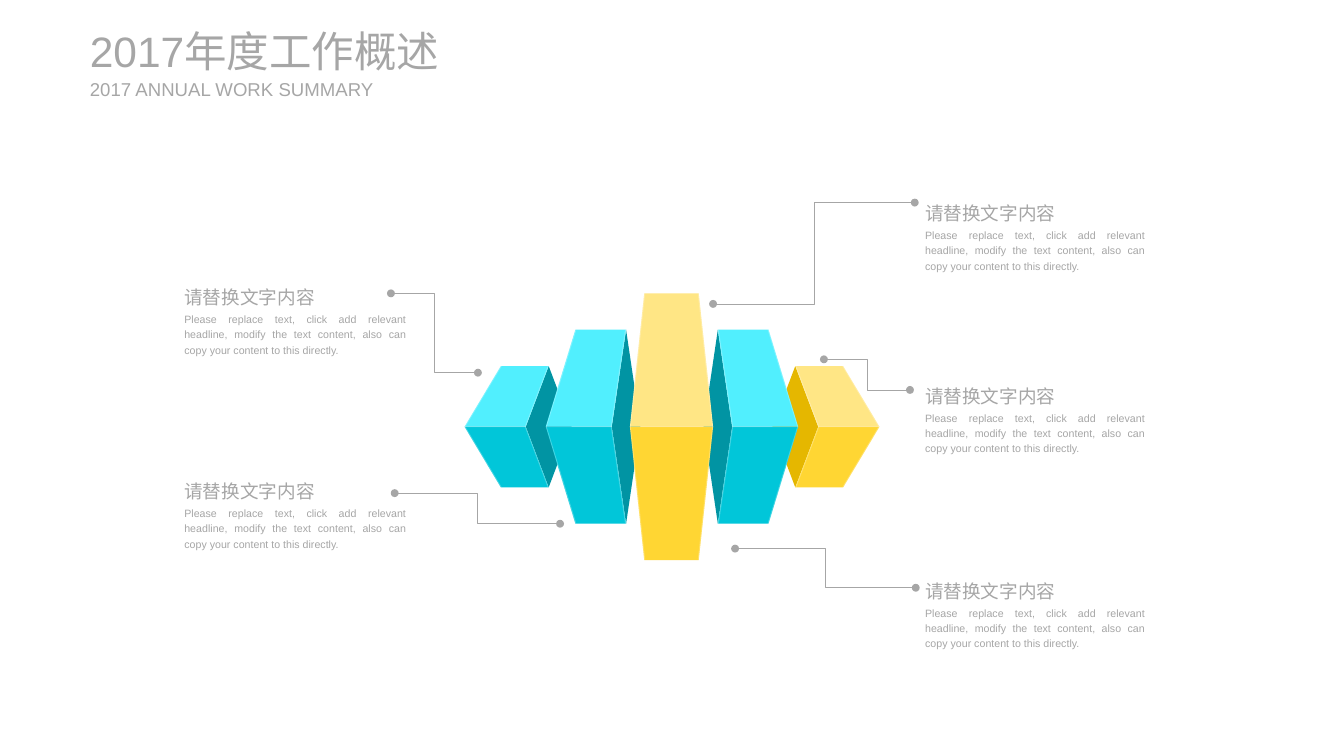
from lxml.etree import SubElement
from pptx import Presentation
from pptx.dml.color import RGBColor
from pptx.enum.shapes import MSO_CONNECTOR
from pptx.enum.text import MSO_ANCHOR, MSO_AUTO_SIZE, PP_ALIGN
from pptx.oxml.ns import qn
from pptx.util import Inches, Pt

SLIDE_WIDTH, SLIDE_HEIGHT = 14.06, 7.91
AXIS_Y = 4.465
EDGE = 0.01

GREY = RGBColor(0xA6, 0xA6, 0xA6)
WHITE = RGBColor(0xFF, 0xFF, 0xFF)
# Upper face, lower face, side face
CYAN = (RGBColor(0x51, 0xEF, 0xFE), RGBColor(0x01, 0xC6, 0xD9), RGBColor(0x01, 0x94, 0xA3))
YELLOW = (RGBColor(0xFF, 0xE6, 0x85), RGBColor(0xFF, 0xD6, 0x33), RGBColor(0xE5, 0xB7, 0x00))

HEADING = "请替换文字内容"
BODY = ("Please replace text, click add relevant headline, modify the text content, "
        "also can copy your content to this directly.")

# Outer point, outer corner, inner corner, inner point, half height, far point of side face
SMALL_BLOCK = (4.86, 5.24, 5.74, 5.5, 0.635, 5.98)
MEDIUM_BLOCK = (5.71, 6.02, 6.55, 6.4, 1.015, 6.7)
CENTRE_BLOCK = (6.59, 6.74, 7.31, 7.46, 1.395, None)

# Left, top, body width
NOTES = [(1.83, 2.9, 2.52), (1.83, 4.93, 2.52),
         (9.58, 2.02, 2.5), (9.58, 3.93, 2.5), (9.58, 5.97, 2.5)]
# Start x, start y, end x, end y
LEADERS = [(5, 3.9, 4.09, 3.07), (5.86, 5.48, 4.13, 5.16), (9.57, 2.12, 7.46, 3.18),
           (9.52, 4.08, 8.62, 3.76), (9.58, 6.15, 7.69, 5.74)]


def add_polygon(slide, points, color, mirrored, alpha=None):
    """Draw a borderless polygon, reflected about the slide's middle if mirrored."""
    corners = [(Inches(SLIDE_WIDTH - x if mirrored else x), Inches(y)) for x, y in points]
    builder = slide.shapes.build_freeform(*corners[0])
    builder.add_line_segments(corners[1:], close=True)
    polygon = builder.convert_to_shape()
    polygon.shadow.inherit = False
    polygon.fill.solid()
    polygon.fill.fore_color.rgb = color
    polygon.line.fill.background()
    if alpha is not None:
        srgb = polygon._element.spPr.find(qn("a:solidFill")).find(qn("a:srgbClr"))
        SubElement(srgb, qn("a:alpha"), val=str(alpha * 1000))


def add_block(slide, block, palette, mirrored=False):
    outer, outer_corner, inner_corner, inner, half, side_point = block
    upper, lower, side = palette
    top, bottom = AXIS_Y - half, AXIS_Y + half

    if side_point:
        add_polygon(slide, [(inner, AXIS_Y), (inner_corner, top), (side_point, AXIS_Y),
                            (inner_corner, bottom)], side, mirrored)
    for y, color in ((top, upper), (bottom, lower)):
        add_polygon(slide, [(inner, AXIS_Y), (inner_corner, y), (outer_corner, y),
                            (outer, AXIS_Y)], color, mirrored)

    ridge = [(outer, AXIS_Y - EDGE / 2), (inner, AXIS_Y - EDGE / 2),
             (inner, AXIS_Y + EDGE / 2), (outer, AXIS_Y + EDGE / 2)]
    add_polygon(slide, ridge, WHITE, mirrored, alpha=25)
    for point, corner, shift in ((outer, outer_corner, EDGE), (inner, inner_corner, -EDGE)):
        glint = [(point, AXIS_Y), (corner, top), (corner + shift, top),
                 (point + shift, AXIS_Y), (corner + shift, bottom), (corner, bottom)]
        add_polygon(slide, glint, WHITE, mirrored, alpha=25)


def format_text(frame, text, size, align):
    frame.text = text
    frame.word_wrap = True
    paragraph = frame.paragraphs[0]
    paragraph.alignment = align
    paragraph.font.name = "Arial"
    paragraph.font.size = Pt(size)
    paragraph.font.color.rgb = GREY
    return paragraph


def add_text(slide, left, top, width, height, text, size, align=PP_ALIGN.JUSTIFY):
    box = slide.shapes.add_textbox(Inches(left), Inches(top), Inches(width), Inches(height))
    paragraph = format_text(box.text_frame, text, size, align)
    box.text_frame.auto_size = MSO_AUTO_SIZE.SHAPE_TO_FIT_TEXT
    if align == PP_ALIGN.JUSTIFY:
        paragraph.line_spacing = 1.2
    return box.text_frame


def add_note(slide, left, top, width):
    add_text(slide, left, top, 1.65, 0.36, HEADING, 14)
    add_text(slide, left, top + 0.3, width, 0.57, BODY, 8)


def add_leader(slide, start_x, start_y, end_x, end_y):
    """Draw an elbow line with a dot at each end."""
    leader = slide.shapes.add_connector(MSO_CONNECTOR.ELBOW, Inches(start_x), Inches(start_y),
                                        Inches(end_x), Inches(end_y))
    leader.line.color.rgb = GREY
    leader.line.width = Pt(0.5)
    properties = leader._element.spPr
    outline = properties.find(qn("a:ln"))
    for tip in ("a:headEnd", "a:tailEnd"):
        SubElement(outline, qn(tip), type="oval")
    SubElement(properties, qn("a:effectLst"))


def trim_frame(frame):
    frame.margin_left = frame.margin_right = frame.margin_top = frame.margin_bottom = 0
    frame.vertical_anchor = MSO_ANCHOR.MIDDLE


def add_titles(slide):
    title = slide.shapes.title
    title.left, title.top = Inches(0.94), Inches(0.26)
    title.width, title.height = Inches(4.32), Inches(0.54)
    format_text(title.text_frame, "2017年度工作概述", 32, PP_ALIGN.LEFT)
    title.text_frame.auto_size = MSO_AUTO_SIZE.NONE
    trim_frame(title.text_frame)
    subtitle = add_text(slide, 0.94, 0.81, 3.07, 0.24, "2017 ANNUAL WORK SUMMARY", 14,
                        PP_ALIGN.LEFT)
    trim_frame(subtitle)


def main():
    presentation = Presentation()
    presentation.slide_width = Inches(SLIDE_WIDTH)
    presentation.slide_height = Inches(SLIDE_HEIGHT)
    slide = presentation.slides.add_slide(presentation.slide_layouts[5])

    add_titles(slide)
    for mirrored, small_palette in ((False, CYAN), (True, YELLOW)):
        add_block(slide, SMALL_BLOCK, small_palette, mirrored)
        add_block(slide, MEDIUM_BLOCK, CYAN, mirrored)
    add_block(slide, CENTRE_BLOCK, YELLOW)
    for note in NOTES:
        add_note(slide, *note)
    for leader in LEADERS:
        add_leader(slide, *leader)

    presentation.save("out.pptx")


if __name__ == "__main__":
    main()
